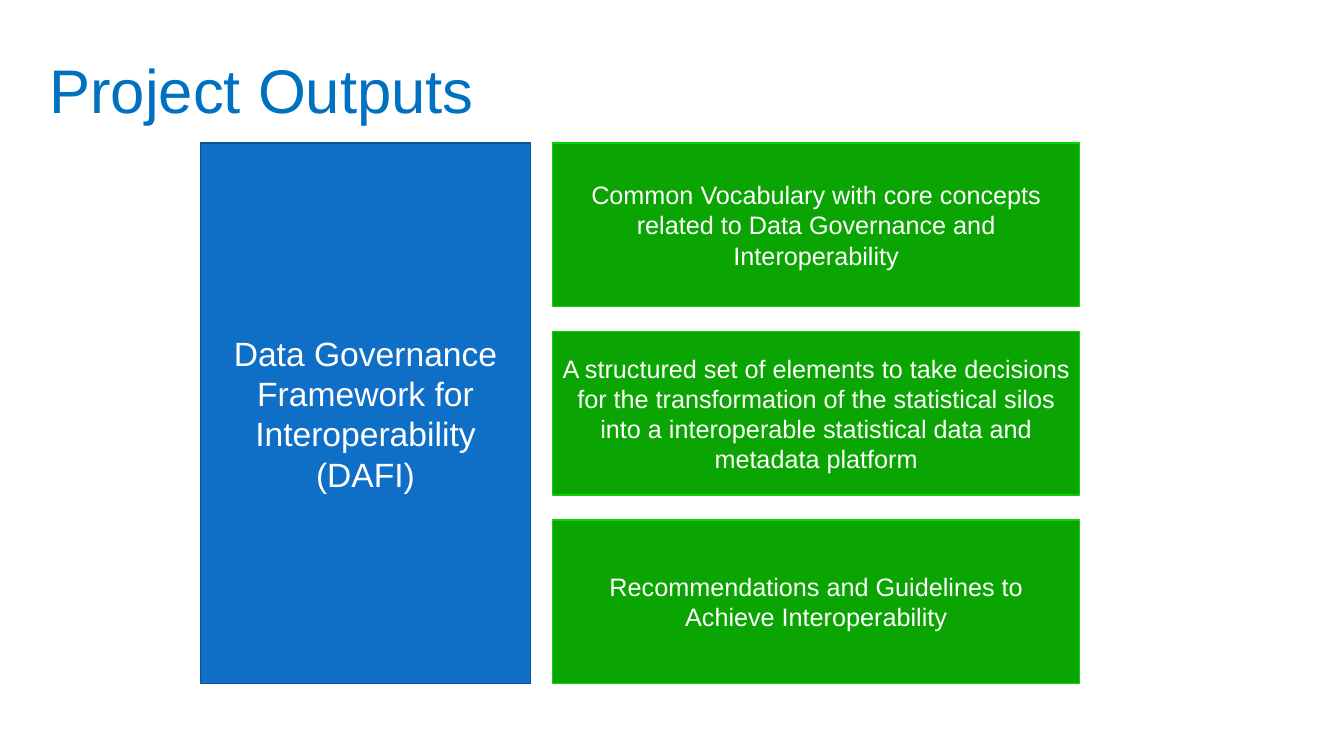
from pptx import Presentation
from pptx.dml.color import RGBColor
from pptx.enum.shapes import MSO_SHAPE
from pptx.enum.text import MSO_ANCHOR, PP_ALIGN
from pptx.util import Inches, Pt

RECTANGLE = MSO_SHAPE.RECTANGLE
MIDDLE = MSO_ANCHOR.MIDDLE
LEFT, CENTER = PP_ALIGN.LEFT, PP_ALIGN.CENTER

COLORS = {
    "title": "0070C0",
    "framework": "0F6FC6",
    "framework_edge": "0B5292",
    "output": "0BA503",
    "output_edge": "0ED204",
    "label": "FFFFFF",
}

OUTPUTS = [
    "Common Vocabulary with core concepts related to Data Governance and Interoperability",
    "A structured set of elements to take decisions for the transformation of the "
    "statistical silos into a interoperable statistical data and metadata platform",
    "Recommendations and Guidelines to Achieve Interoperability",
]


def color(name):
    return RGBColor.from_string(COLORS[name])


def write(frame, text, *, size, fill, font, align=CENTER, line_spacing=1.0):
    frame.word_wrap = True
    frame.vertical_anchor = MIDDLE
    paragraph = frame.paragraphs[0]
    paragraph.alignment = align
    paragraph.line_spacing = line_spacing
    run = paragraph.add_run()
    run.text = text
    run.font.name = font
    run.font.size = Pt(size)
    run.font.color.rgb = color(fill)


class OutputsSlide:
    font = "Arial"

    def __init__(self, presentation):
        self.slide = presentation.slides.add_slide(presentation.slide_layouts[5])

    def title(self, text, left, top, width, height):
        heading = self.slide.shapes.title
        heading.left, heading.top = Inches(left), Inches(top)
        heading.width, heading.height = Inches(width), Inches(height)
        write(heading.text_frame, text, size=44, fill="title", font=self.font,
              align=LEFT, line_spacing=0.9)

    def block(self, text, left, top, width, height, *, fill, size):
        panel = self.slide.shapes.add_shape(
            RECTANGLE, Inches(left), Inches(top), Inches(width), Inches(height))
        panel.shadow.inherit = False
        panel.fill.solid()
        panel.fill.fore_color.rgb = color(fill)
        panel.line.color.rgb = color(f"{fill}_edge")
        panel.line.width = Pt(1)
        write(panel.text_frame, text, size=size, fill="label", font=self.font)


def main():
    presentation = Presentation()
    presentation.slide_width = Inches(13.33)
    presentation.slide_height = Inches(7.5)

    outputs_slide = OutputsSlide(presentation)
    outputs_slide.title("Project Outputs", 0.39, 0.2, 11.5, 1.45)

    top, total_height, output_height = 1.42, 5.36, 1.62
    outputs_slide.block("Data Governance Framework for Interoperability (DAFI)",
                        1.99, top, 3.27, total_height, fill="framework", size=24)

    pitch = (total_height - output_height) / (len(OUTPUTS) - 1)
    for row, output in enumerate(OUTPUTS):
        outputs_slide.block(output, 5.48, top + row * pitch, 5.23, output_height,
                            fill="output", size=18)

    presentation.save("out.pptx")


if __name__ == "__main__":
    main()
